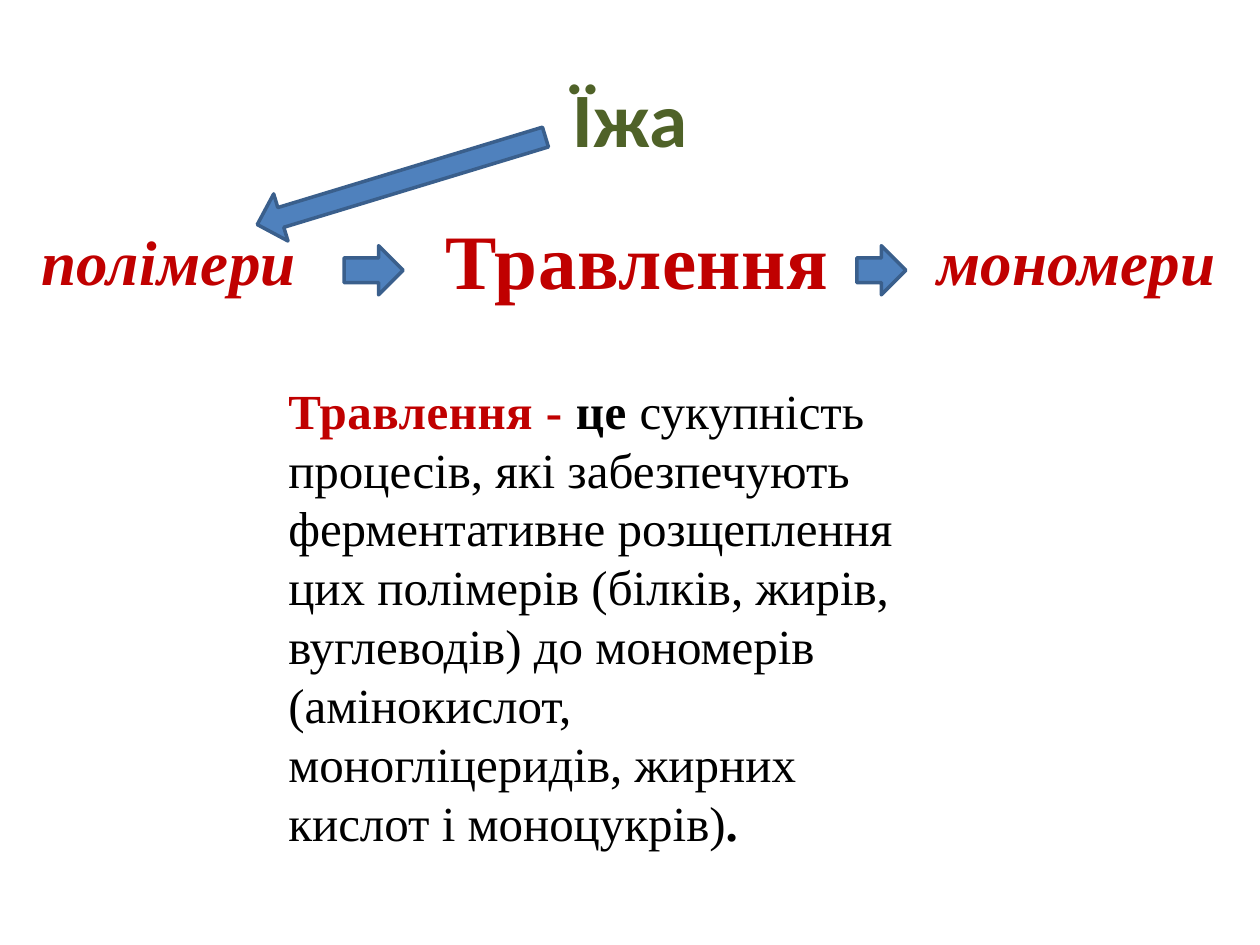
import pptx
import pptx.dml.color
import pptx.enum.shapes
import pptx.enum.text
import pptx.util

Pt = pptx.util.Pt
Shape = pptx.enum.shapes.MSO_SHAPE
Anchor = pptx.enum.text.MSO_ANCHOR
Align = pptx.enum.text.PP_ALIGN
Fit = pptx.enum.text.MSO_AUTO_SIZE

SERIF = "Times New Roman"
RED, GREEN, BLACK = "C00000", "4F6228", "000000"
BLUE, EDGE = "4F81BD", "3A5F8C"


def paint(target, color):
    target.rgb = pptx.dml.color.RGBColor.from_string(color)


def add_run(para, text, size, color, font=SERIF, bold=True, italic=False, gap=0):
    """Add one run; gap is the letter spacing in points."""
    run = para.add_run()
    run.text = text
    run.font.size = Pt(size)
    run.font.name = font
    run.font.bold = bold
    run.font.italic = italic
    paint(run.font.color, color)
    if gap:
        run.font._element.set("spc", str(round(gap * 100)))


def add_box(slide, left, top, width, height, wrap=False, fit=Fit.SHAPE_TO_FIT_TEXT):
    """Add an empty text box and return its text frame."""
    box = slide.shapes.add_textbox(Pt(left), Pt(top), Pt(width), Pt(height))
    frame = box.text_frame
    frame.word_wrap = wrap
    frame.auto_size = fit
    return frame


def add_title(slide, text):
    frame = add_box(slide, 36, 21.6, 648, 90, True, Fit.NONE)
    frame.vertical_anchor = Anchor.MIDDLE
    para = frame.paragraphs[0]
    para.alignment = Align.CENTER
    add_run(para, text, 44, GREEN, "Calibri")


def add_term(slide, text, left, width):
    frame = add_box(slide, left, 123.8, width, 51)
    add_run(frame.paragraphs[0], text, 36, RED, italic=True, gap=0.2)


def add_arrow(slide, kind, left, top, width, height, turn=0):
    arrow = slide.shapes.add_shape(kind, Pt(left), Pt(top), Pt(width), Pt(height))
    arrow.rotation = turn
    arrow.shadow.inherit = False
    arrow.fill.solid()
    paint(arrow.fill.fore_color, BLUE)
    paint(arrow.line.color, EDGE)
    arrow.line.width = Pt(2)
    return arrow


def add_meaning(slide):
    para = add_box(slide, 157.7, 213.8, 360, 278.6, True).paragraphs[0]
    add_run(para, "Травлення - ", 28, RED, gap=0.3)
    add_run(para, "це ", 28, BLACK, gap=0.3)
    add_run(
        para,
        "сукупність процесів, які забезпечують ферментативне розщеплення "
        "цих полімерів (білків, жирів, вуглеводів) до мономерів "
        "(амінокислот, моногліцеридів, жирних кислот і моноцукрів)",
        28, BLACK, bold=False,
    )
    add_run(para, ".", 28, BLACK, gap=0.3)


def main():
    deck = pptx.Presentation()
    deck.slide_width, deck.slide_height = Pt(720), Pt(540)
    slide = deck.slides.add_slide(deck.slide_layouts[6])

    add_title(slide, "Їжа")
    add_term(slide, "полімери", 16.6, 162)
    topic = add_box(slide, 247.7, 118.1, 235.4, 60.5)
    add_run(topic.paragraphs[0], "Травлення", 44, RED, gap=0.3)
    add_term(slide, "мономери", 528.5, 175.7)

    for left, width in ((196.6, 33.8), (489.6, 28.1)):
        add_arrow(slide, Shape.RIGHT_ARROW, left, 140.4, width, 28.1)
    slant = add_arrow(slide, Shape.DOWN_ARROW, 215.3, 17.3, 28.1, 172.1, 73.1)
    slant.adjustments[0] = 0.42

    add_meaning(slide)
    deck.save("out.pptx")


if __name__ == "__main__":
    main()
